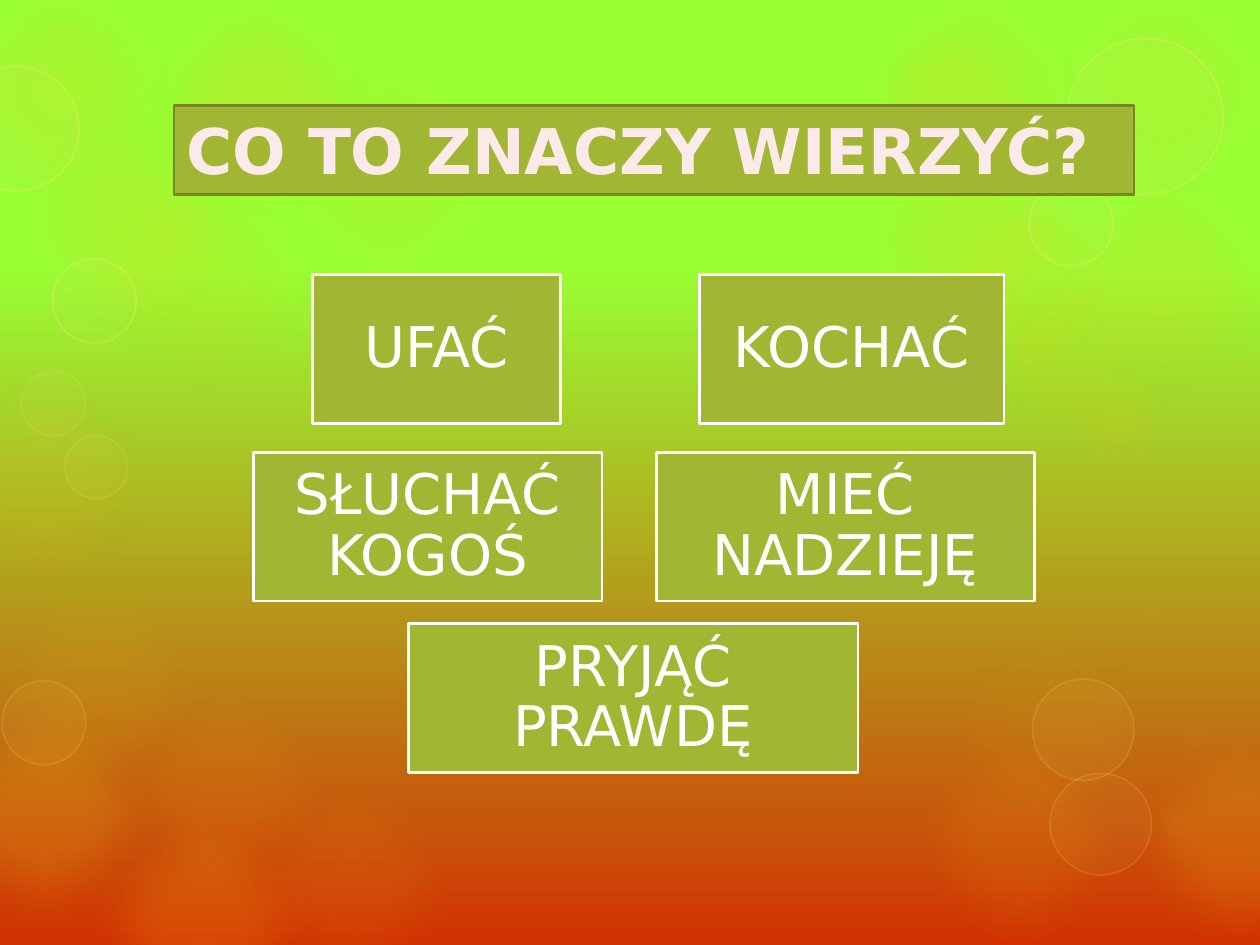
from dataclasses import dataclass

from pptx import Presentation
from pptx.dml.color import RGBColor as RGB
from pptx.enum.shapes import MSO_SHAPE as Preset
from pptx.enum.text import MSO_ANCHOR as Anchor, PP_ALIGN as Align
from pptx.oxml.ns import qn
from pptx.oxml.xmlchemy import OxmlElement
from pptx.slide import Slide
from pptx.util import Pt


@dataclass(frozen=True)
class Theme:
    font: str = "DejaVu Sans"
    title_size: int = 36
    card_size: int = 32
    sky: RGB = RGB(0x99, 0xFF, 0x33)
    ground: RGB = RGB(0xD1, 0x32, 0x02)
    olive: RGB = RGB(0xA1, 0xB6, 0x33)
    dark_olive: RGB = RGB(0x77, 0x87, 0x26)
    white: RGB = RGB(0xFF, 0xFF, 0xFF)
    blush: RGB = RGB(0xFC, 0xE9, 0xE9)
    amber: RGB = RGB(0xFD, 0xC6, 0x1B)
    cream: RGB = RGB(0xFE, 0xEB, 0xAE)
    straw: RGB = RGB(0xFF, 0xE2, 0x81)


THEME = Theme()


@dataclass(frozen=True)
class BubbleStyle:
    fill: RGB
    rim: RGB | None = None
    rim_width: float = 0
    blur: float = 0


@dataclass(frozen=True)
class Bubble:
    style: BubbleStyle
    left: float
    top: float
    size: float
    fill_alpha: int
    rim_alpha: int = 0


@dataclass(frozen=True)
class Card:
    text: str
    left: float
    top: float
    width: float
    height: float = 85


GLOW = BubbleStyle(THEME.amber, blur=25)
HAZE = BubbleStyle(THEME.amber, THEME.cream, 14, 12.5)
RING = BubbleStyle(THEME.straw, THEME.straw, 1)
SOFT_RING = BubbleStyle(THEME.straw, THEME.straw, 5, 12.5)

# Bubbles from back to front: left, top, diameter, opacities in percent
BUBBLES = [
    *(Bubble(GLOW, x, y, 150, a) for x, y, a in [
        (-18, 318, 8), (41, 86, 10), (148, 22, 10), (41, 451, 16),
        (-40, -23, 14), (73, -13, 20), (0, 52, 15), (590, -23, 10),
        (482, -21, 10), (590, 86, 15), (634, 405, 16), (525, 343, 5),
        (-49, 390, 16), (55, 377, 8), (482, 62, 15), (508, 405, 10),
        (125, 429, 8), (-50, 203, 8)]),
    *(Bubble(HAZE, x, y, d, 10, 6) for x, y, d in [
        (500, 17, 82), (541, 114, 96), (568, 161, 82), (610, 210, 57)]),
    *(Bubble(RING, x, y, d, 5, 30) for x, y, d in [
        (-26, 38, 71), (30, 148, 48), (610, 22, 89), (588, 104, 48)]),
    *(Bubble(RING, x, y, d, 5, 15) for x, y, d in [
        (1, 389, 48), (600, 442, 58), (590, 388, 58),
        (12, 212, 37), (37, 249, 36)]),
    *(Bubble(SOFT_RING, x, y, d, 5, 15) for x, y, d in [
        (648, 446, 48), (636, 323, 44), (662, 398, 44)]),
]

TITLE = Card("CO TO ZNACZY WIERZYĆ?", 99.4, 60.2, 548.6, 51)
CARDS = [
    Card("UFAĆ", 178.6, 157, 141.8),
    Card("KOCHAĆ", 399.6, 157, 174.2),
    Card("SŁUCHAĆ KOGOŚ", 144.7, 258.5, 199.4),
    Card("MIEĆ NADZIEJĘ", 375.1, 258.5, 216),
    Card("PRYJĄĆ PRAWDĘ", 233.3, 356.4, 257),
]


def paint_background(slide: Slide) -> None:
    fill = slide.background.fill
    fill.gradient()
    fill.gradient_angle = 270
    for stop, color, position in zip(
            fill.gradient_stops, (THEME.sky, THEME.ground), (0.28, 1)):
        stop.color.rgb = color
        stop.position = position


def draw_bubble(slide: Slide, bubble: Bubble) -> None:
    style = bubble.style
    shape = slide.shapes.add_shape(
        Preset.OVAL, Pt(bubble.left), Pt(bubble.top), Pt(bubble.size), Pt(bubble.size))
    shape.shadow.inherit = False
    shape.fill.solid()
    shape.fill.fore_color.rgb = style.fill
    if style.rim is None:
        shape.line.fill.background()
    else:
        shape.line.color.rgb = style.rim
        shape.line.width = Pt(style.rim_width)
    properties = shape._element.spPr
    # Transparency: fill colour first, rim colour second
    colors = list(properties.iter(qn("a:srgbClr")))
    for color, percent in zip(colors, (bubble.fill_alpha, bubble.rim_alpha)):
        alpha = OxmlElement("a:alpha")
        alpha.set("val", str(percent * 1000))
        color.append(alpha)
    if style.blur:
        soft_edge = OxmlElement("a:softEdge")
        soft_edge.set("rad", str(Pt(style.blur)))
        properties.find(qn("a:effectLst")).append(soft_edge)


def draw_card(slide: Slide, card: Card, border: RGB, color: RGB, size: int,
              is_title: bool = False) -> None:
    shape = slide.shapes.add_shape(
        Preset.RECTANGLE, Pt(card.left), Pt(card.top), Pt(card.width), Pt(card.height))
    shape.shadow.inherit = False
    shape.fill.solid()
    shape.fill.fore_color.rgb = THEME.olive
    shape.line.color.rgb = border
    shape.line.width = Pt(1.5)
    frame = shape.text_frame
    frame.word_wrap = True
    frame.vertical_anchor = Anchor.TOP if is_title else Anchor.MIDDLE
    paragraph = frame.paragraphs[0]
    paragraph.alignment = Align.LEFT if is_title else Align.CENTER
    if not is_title:
        frame.margin_left = frame.margin_right = Pt(9.4)
        frame.margin_top = frame.margin_bottom = Pt(9.4)
        paragraph.line_spacing = 0.9
    run = paragraph.add_run()
    run.text = card.text
    run.font.name = THEME.font
    run.font.size = Pt(size)
    run.font.bold = is_title
    run.font.color.rgb = color


def main() -> None:
    deck = Presentation()
    deck.slide_width, deck.slide_height = Pt(720), Pt(540)
    slide = deck.slides.add_slide(deck.slide_layouts[6])
    # Backdrop
    paint_background(slide)
    for bubble in BUBBLES:
        draw_bubble(slide, bubble)
    # Question and answers
    draw_card(slide, TITLE, THEME.dark_olive, THEME.blush, THEME.title_size, is_title=True)
    for card in CARDS:
        draw_card(slide, card, THEME.white, THEME.white, THEME.card_size)
    deck.save("out.pptx")


if __name__ == "__main__":
    main()
